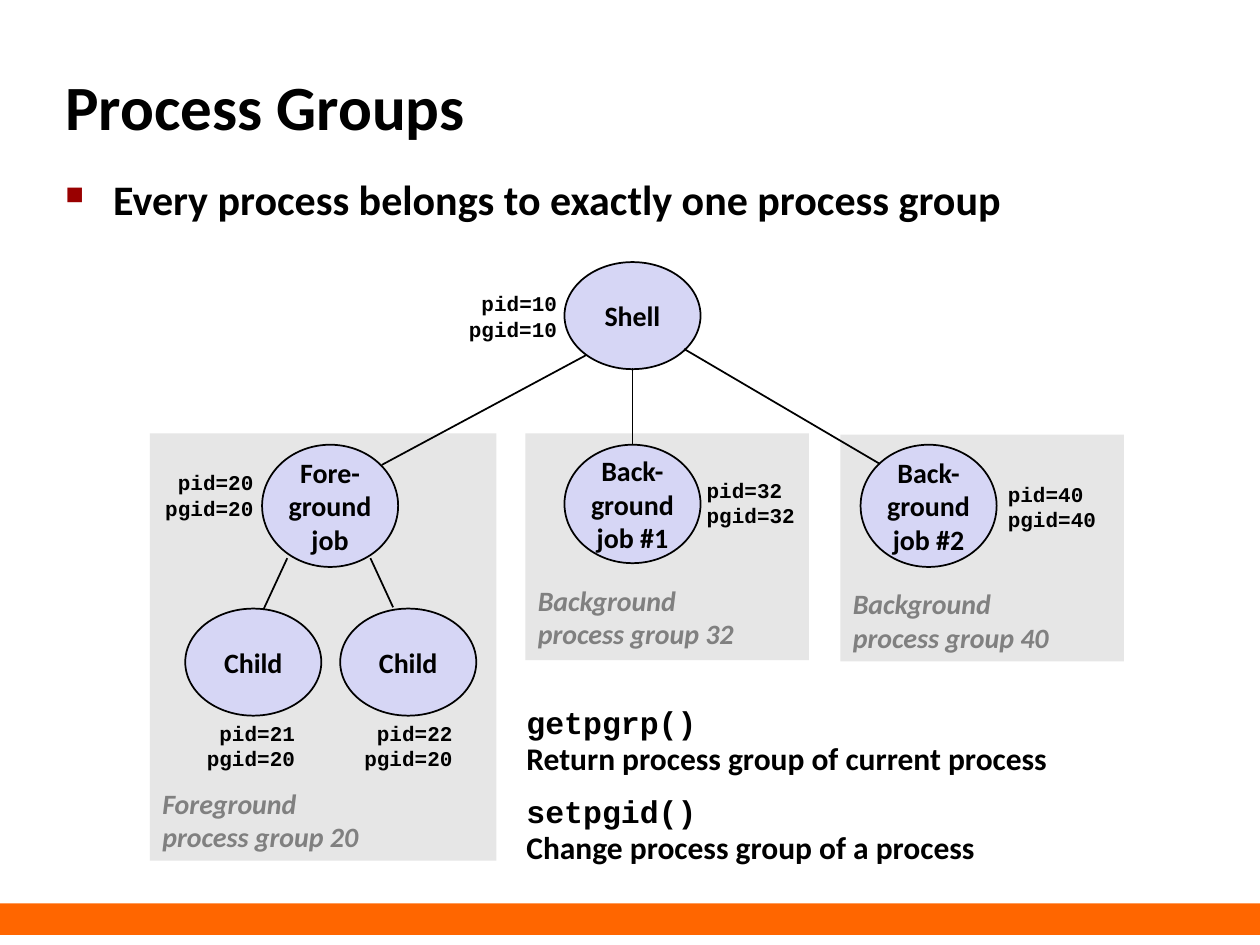
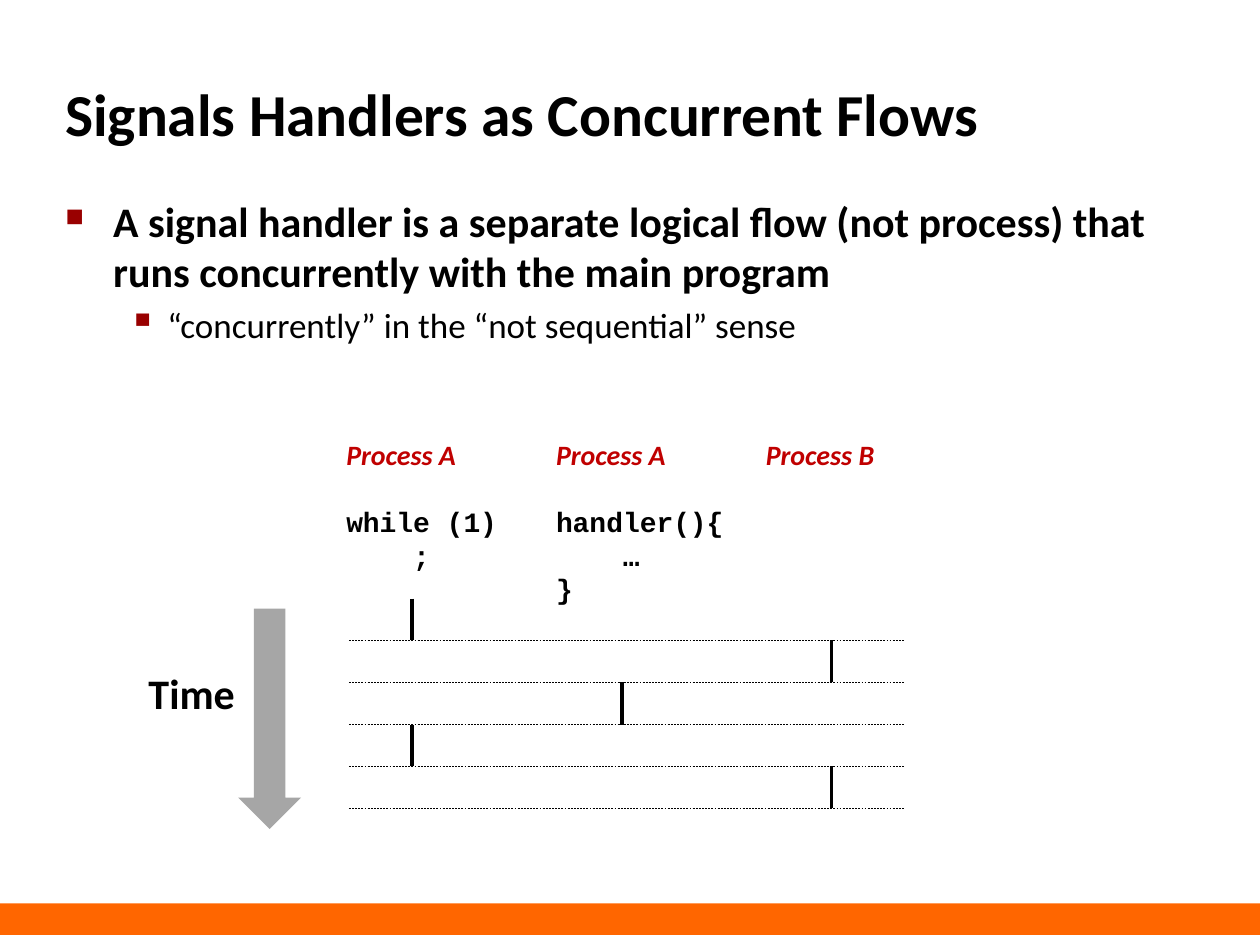
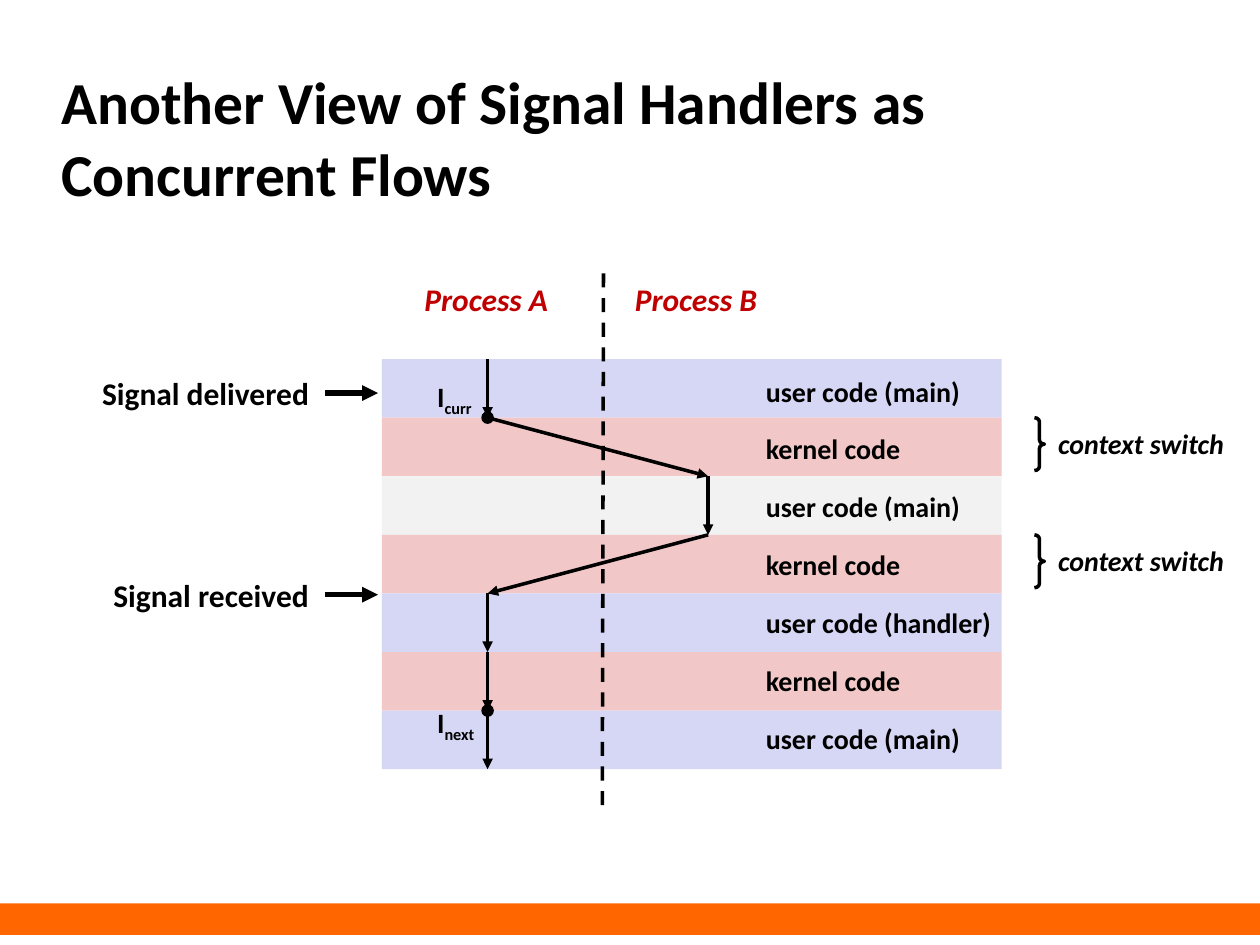
import itertools

import pptx
import pptx.dml.color
import pptx.enum.dml
import pptx.enum.shapes
import pptx.enum.text
import pptx.oxml.ns
import pptx.util
from lxml import etree

Inches = pptx.util.Inches
Pt = pptx.util.Pt
RGBColor = pptx.dml.color.RGBColor
SHAPE = pptx.enum.shapes.MSO_SHAPE
ALIGN = pptx.enum.text.PP_ALIGN
ANCHOR = pptx.enum.text.MSO_ANCHOR
GROW = pptx.enum.text.MSO_AUTO_SIZE.SHAPE_TO_FIT_TEXT
DASH = pptx.enum.dml.MSO_LINE.DASH

# Colours
BLACK = RGBColor(0x00, 0x00, 0x00)
ORANGE = RGBColor(0xFF, 0x66, 0x00)
LAVENDER = RGBColor(0xD6, 0xD6, 0xF5)
PINK = RGBColor(0xF1, 0xC7, 0xC7)
PALE_GREY = RGBColor(0xF2, 0xF2, 0xF2)
GROUP_GREY = RGBColor(0xE6, 0xE6, 0xE6)
ARROW_GREY = RGBColor(0xA6, 0xA6, 0xA6)
CAPTION_GREY = RGBColor(0x80, 0x80, 0x80)
RED = RGBColor(0xC0, 0x00, 0x00)
BULLET_RED = "990000"


# Text styles
def style(size, color=BLACK, name="Calibri", bold=True, italic=False):
    return {"size": Pt(size), "color": color, "name": name, "bold": bold, "italic": italic}


POINT = style(24)
SUBPOINT = style(20, bold=False)
STRONG = style(18)
LABEL = style(16)
NOTE = style(16, italic=True)
CAPTION = style(16, CAPTION_GREY, italic=True)
CODE = style(16, name="Courier New")
CALL = style(18, name="Courier New")
PROCESS_ID = style(12, name="Courier New")

HUG = {"word_wrap": False, "auto_size": GROW}
TIGHT = {**HUG, "margin_left": Inches(0.05), "margin_right": Inches(0.05)}
WRAP = {"word_wrap": True}


def apply_format(target, values):
    for attribute, value in values.items():
        if attribute == "color":
            target.color.rgb = value
        else:
            setattr(target, attribute, value)


def add_child(parent, tag, **attributes):
    return etree.SubElement(parent, pptx.oxml.ns.qn(tag), attributes)


# Text
def add_paragraph(frame, runs, layout=None, left=0, first=0):
    """Fill the empty first paragraph or add one; a run of "\\n" breaks the line."""
    paragraph = frame.paragraphs[0]
    if paragraph.runs:
        paragraph = frame.add_paragraph()
    apply_format(paragraph, layout or {})
    if left:
        properties = paragraph._p.get_or_add_pPr()
        properties.set("marL", str(Inches(left)))
        properties.set("indent", str(Inches(first)))
    for words, font in runs:
        if words == "\n":
            paragraph.add_line_break()
            continue
        run = paragraph.add_run()
        run.text = words
        apply_format(run.font, font)
    return paragraph


def add_lines(frame, text, font, layout=None):
    for line in text.split("\n"):
        add_paragraph(frame, [(line, font)], layout)


def add_frame(slide, box, setup):
    frame = slide.shapes.add_textbox(*map(Inches, box)).text_frame
    apply_format(frame, setup)
    return frame


def add_label(slide, box, text, font, align=ALIGN.LEFT, setup=HUG):
    frame = add_frame(slide, box, setup)
    add_lines(frame, text, font, {"alignment": align})
    return frame


def add_bullet(frame, text, font, symbol, percent, left, first, before):
    paragraph = add_paragraph(frame, [(text, font)], {"space_before": Pt(before)}, left, first)
    properties = paragraph._p.get_or_add_pPr()
    add_child(add_child(properties, "a:buClr"), "a:srgbClr", val=BULLET_RED)
    add_child(properties, "a:buSzPct", val=str(percent * 1000))
    add_child(properties, "a:buChar", char=symbol)


def add_point(frame, text):
    add_bullet(frame, text, POINT, "■", 60, 0.38, -0.38, 5)


def add_subpoint(frame, text):
    add_bullet(frame, text, SUBPOINT, "▪", 110, 0.81, -0.31, 4)


# Shapes and lines
def add_shape(slide, kind, box, fill=None, outline=None):
    shape = slide.shapes.add_shape(kind, *map(Inches, box))
    shape.shadow.inherit = False
    if fill is None:
        shape.fill.background()
    else:
        shape.fill.solid()
        shape.fill.fore_color.rgb = fill
    if outline is None:
        shape.line.fill.background()
    else:
        apply_format(shape.line, {"color": BLACK, "width": Pt(outline)})
    return shape


def add_line(slide, start, end, width, dash=None, arrow=False):
    line = slide.shapes.add_connector(
        pptx.enum.shapes.MSO_CONNECTOR.STRAIGHT, *map(Inches, (*start, *end)))
    apply_format(line.line, {"color": BLACK, "width": Pt(width), "dash_style": dash})
    if arrow:
        add_child(line.line._get_or_add_ln(), "a:tailEnd", type="triangle")
    add_child(line._element.spPr, "a:effectLst")


def add_process(slide, box, name):
    oval = add_shape(slide, SHAPE.OVAL, box, LAVENDER, 1)
    apply_format(oval.text_frame, {"word_wrap": False, "vertical_anchor": ANCHOR.MIDDLE})
    add_lines(oval.text_frame, name, LABEL, {"alignment": ALIGN.CENTER})


def start_slide(deck, title, left, top, size):
    slide = deck.slides.add_slide(deck.slide_layouts[6])
    add_shape(slide, SHAPE.RECTANGLE, (0, 7.17, 10, 0.25), ORANGE)
    add_label(slide, (left, top, 8.3, 0.83), title, style(size),
              setup={**WRAP, "vertical_anchor": ANCHOR.MIDDLE})
    return slide


# Slide 1
def build_process_groups(deck):
    slide = start_slide(deck, "Process Groups", 0.42, 0.42, 36)
    add_point(add_frame(slide, (0.42, 1.33, 8.44, 0.67), WRAP),
              "Every process belongs to exactly one process group")

    # Group areas with their captions
    for area, caption_top, caption in (
        ((6.67, 3.45, 2.25, 1.8), 4.61, "Background\nprocess group 40"),
        ((4.17, 3.44, 2.25, 1.8), 4.58, "Background\nprocess group 32"),
        ((1.19, 3.44, 2.75, 3.39), 6.19, "Foreground\nprocess group 20"),
    ):
        add_shape(slide, SHAPE.RECTANGLE, area, GROUP_GREY)
        add_label(slide, (area[0], caption_top, 1.85, 0.64), caption, CAPTION)

    # Processes: oval, name, place of the ids, pid, pgid
    for oval, name, ids_at, pid, pgid, align in (
        ((4.48, 2.08, 1.08, 0.85), "Shell", (3.61, 2.26), 10, 10, ALIGN.RIGHT),
        ((2.08, 3.53, 1.08, 0.97), "Fore-\nground\njob", (1.2, 3.68), 20, 20, ALIGN.RIGHT),
        ((4.48, 3.53, 1.08, 0.94), "Back-\nground\njob #1", (5.51, 3.74), 32, 32, ALIGN.LEFT),
        ((6.83, 3.53, 1.08, 0.97), "Back-\nground\njob #2", (7.9, 3.77), 40, 40, ALIGN.LEFT),
        ((1.47, 4.83, 1.08, 0.85), "Child", (1.53, 5.67), 21, 20, ALIGN.RIGHT),
        ((2.7, 4.83, 1.08, 0.85), "Child", (2.78, 5.67), 22, 20, ALIGN.RIGHT),
    ):
        add_process(slide, oval, name)
        add_label(slide, (*ids_at, 0.91, 0.5), f"pid={pid}\npgid={pgid}", PROCESS_ID, align)

    # Parent to child
    for parent, child in (
        ((2.28, 4.43), (2.09, 4.84)),
        ((2.94, 4.43), (3.12, 4.82)),
        ((5.02, 2.92), (5.02, 3.53)),
        ((4.65, 2.82), (3.03, 3.69)),
        ((5.43, 2.77), (6.98, 3.68)),
    ):
        add_line(slide, parent, child, 1)

    # System calls
    calls = add_frame(slide, (4.08, 5.55, 4.5, 1.5), WRAP)
    for call, effect in (
        ("getpgrp()", "Return process group of current process"),
        ("setpgid()", "Change process group of a process"),
    ):
        add_paragraph(calls, [(call, CALL), ("\n", CALL), (effect, STRONG)],
                      {"line_spacing": 0.95, "space_before": Pt(10)})


# Slide 2
def build_concurrent_flows(deck):
    slide = start_slide(deck, "Signals Handlers as Concurrent Flows", 0.42, 0.48, 34)
    points = add_frame(slide, (0.42, 1.5, 9.09, 1.42), WRAP)
    add_point(points, "A signal handler is a separate logical flow (not process) that "
                      "runs concurrently with the main program")
    add_subpoint(points, "“concurrently” in the “not sequential” sense")

    # Flows: name, code lines with their indents
    flow_lefts = [2.65 + 1.665 * column for column in range(3)]
    flows = (
        ("Process A", (("while (1)", 0), (";", 0.53))),
        ("Process A", (("handler(){", 0), ("…", 0.53), ("}", 0))),
        ("Process B", ()),
    )
    for left, (process, code) in zip(flow_lefts, flows):
        frame = add_label(slide, (left, 3.42, 1.54, 0.37 + 0.36 * len(code)),
                          process, style(16, RED, italic=True))
        for number, (line, indent) in enumerate(code):
            gap = 0 if number else 19.5
            add_paragraph(frame, [(line, CODE)], {"space_before": Pt(gap)}, indent)

    # Time slices, each run by one flow
    slice_height = 1 / 3
    for number, flow in enumerate((0, 2, 1, 0, 2)):
        x = flow_lefts[flow] + 0.62
        top = 4.75 + number * slice_height
        bottom = top + slice_height
        add_line(slide, (x, top), (x, bottom), 2)
        add_line(slide, (2.77, bottom), (7.18, bottom), 0.25, DASH)

    add_label(slide, (1.08, 5.25, 0.89, 0.5), "Time", POINT)
    add_shape(slide, SHAPE.DOWN_ARROW, (1.89, 4.83, 0.5, 1.75), ARROW_GREY)


# Slide 3
def build_handler_view(deck):
    slide = start_slide(deck, "Another View of Signal Handlers as Concurrent Flows",
                        0.39, 0.67, 34)
    first_top, band_height = 2.85, 0.465
    phases = (
        ("user code (main)", LAVENDER),
        ("kernel code", PINK),
        ("user code (main)", PALE_GREY),
        ("kernel code", PINK),
        ("user code (handler)", LAVENDER),
        ("kernel code", PINK),
        ("user code (main)", LAVENDER),
    )
    edges = [first_top + band_height * number for number in range(len(phases) + 1)]

    # Phases of execution
    for number, (phase, color) in enumerate(phases):
        add_shape(slide, SHAPE.RECTANGLE, (3.03, edges[number], 4.92, band_height), color)
        add_label(slide, (5.98, 2.92 + 0.46 * number, 2.02, 0.37), phase, LABEL)

    # Processes and the divide between them
    for left, process in ((3.27, "Process A"), (4.94, "Process B")):
        add_label(slide, (left, 2.17, 1.2, 0.4), process, style(18, RED, italic=True))
    add_line(slide, (4.79, 2.17), (4.78, 6.47), 2, DASH)

    # Flow of control from edge to edge
    in_a, in_b = 3.87, 5.62
    stops = list(zip((in_a, in_a, in_b, in_b, in_a, in_a, in_a, in_a), edges))
    for start, end in itertools.pairwise(stops):
        add_line(slide, start, end, 2, arrow=True)

    # Current and next instruction
    for edge, top, subscript in ((1, 2.96, "curr"), (6, 5.55, "next")):
        add_shape(slide, SHAPE.OVAL, (in_a - 0.05, edges[edge] - 0.05, 0.1, 0.1), BLACK)
        frame = add_frame(slide, (3.42, top, 0.44, 0.37), TIGHT)
        instruction = add_paragraph(frame, [("I", LABEL), (subscript, LABEL)])
        instruction.runs[1].font._element.set("baseline", "-25000")

    # Signal events
    for left, top, width, event in (
        (0.76, 2.92, 1.75, "Signal delivered"),
        (0.85, 4.52, 1.66, "Signal received"),
    ):
        add_label(slide, (left, top, width, 0.4), event, STRONG, setup=TIGHT)
        add_line(slide, (2.58, top + 0.2), (3, top + 0.2), 3, arrow=True)

    # Context switches
    for edge in (1, 3):
        brace = add_shape(slide, SHAPE.RIGHT_BRACE, (8.21, edges[edge], 0.08, 0.42), outline=2)
        brace.adjustments[0] = 0.42
        add_label(slide, (8.3, edges[edge] + 0.02, 1.54, 0.37), "context switch", NOTE)


def main():
    deck = pptx.Presentation()
    deck.slide_width, deck.slide_height = Inches(10), Inches(7.5)
    build_process_groups(deck)
    build_concurrent_flows(deck)
    build_handler_view(deck)
    deck.save("out.pptx")


if __name__ == "__main__":
    main()
